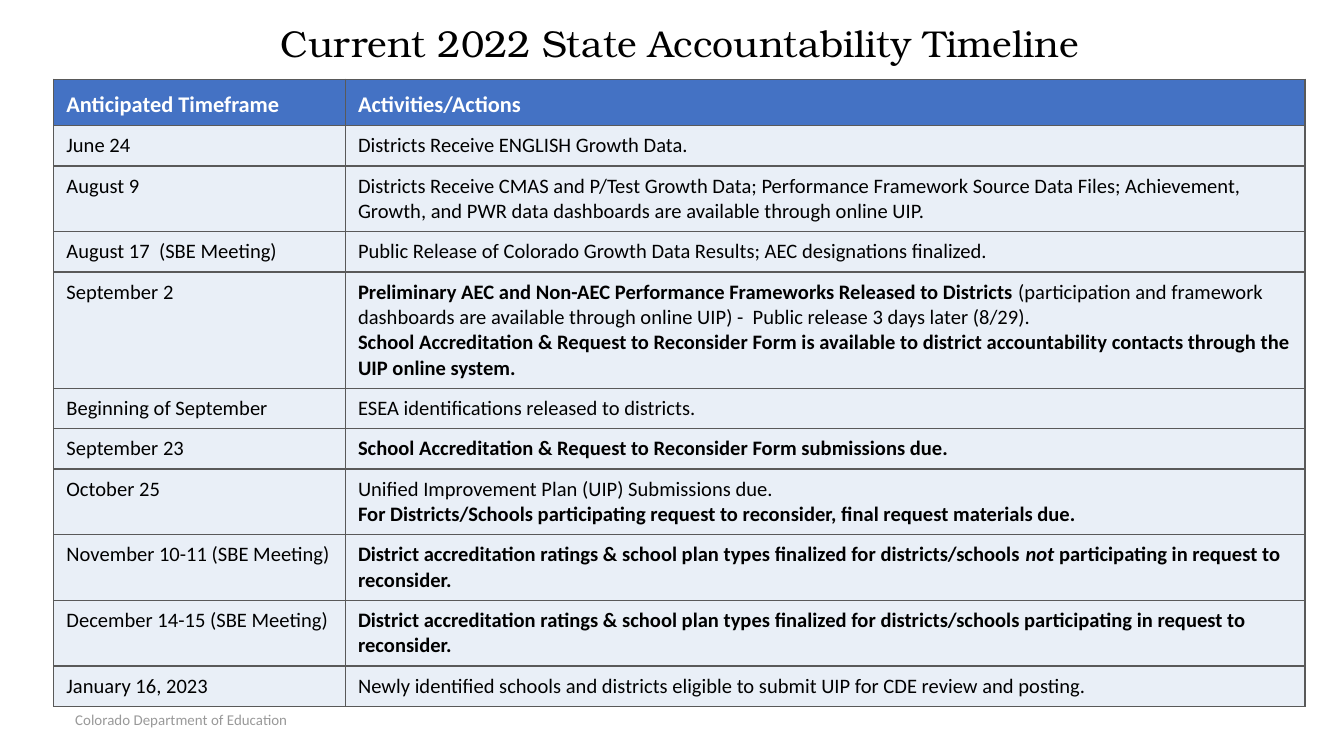
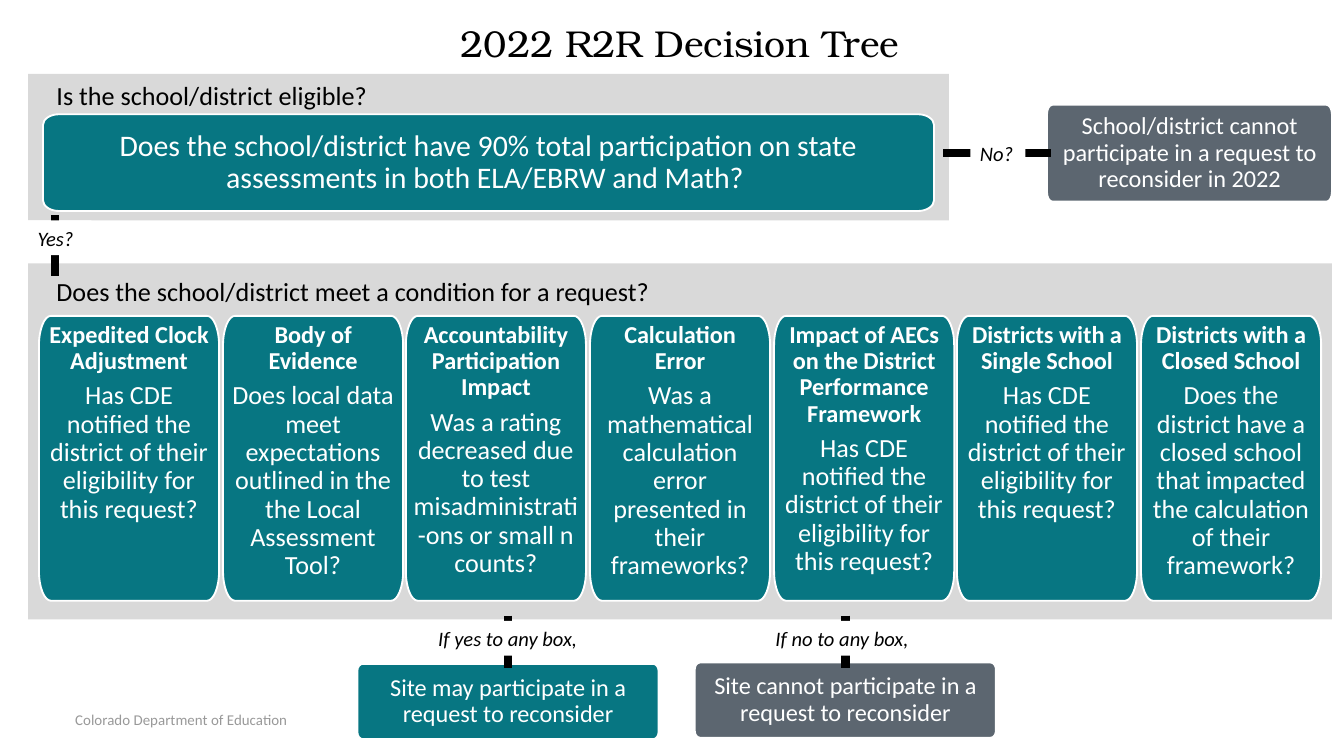
"""Builds two slides: the 2022 accountability timeline and the R2R decision tree."""
from lxml.etree import SubElement
from pptx import Presentation
from pptx.dml.color import RGBColor
from pptx.enum.shapes import MSO_CONNECTOR, MSO_SHAPE
from pptx.enum.text import MSO_ANCHOR as ANCHOR, MSO_AUTO_SIZE, PP_ALIGN as ALIGN
from pptx.oxml.ns import qn
from pptx.util import Emu, Pt

EMU_PER_PX = 9144
SLIDE_WIDTH = 1000
BODY_FONT, TITLE_FONT = "Calibri", "TeX Gyre Bonum"

BLACK = RGBColor(0x00, 0x00, 0x00)
WHITE = RGBColor(0xFF, 0xFF, 0xFF)
FOOTER_GRAY = RGBColor(0x99, 0x99, 0x99)
PANEL_GRAY = RGBColor(0xD9, 0xD9, 0xD9)
HEADER_BLUE = RGBColor(0x44, 0x72, 0xC4)
ROW_BLUE = RGBColor(0xE9, 0xEF, 0xF7)
BORDER_GRAY = RGBColor(0x59, 0x59, 0x59)
TEAL = RGBColor(0x07, 0x76, 0x82)
SLATE = RGBColor(0x5C, 0x66, 0x70)

FOOTER = "Colorado Department of Education"
TIMELINE_TITLE = "Current 2022 State Accountability Timeline"
TREE_TITLE = "2022 R2R Decision Tree"

TIMELINE_HEADER = ("Anticipated Timeframe", "Activities/Actions")
TIMELINE = [
    ("June 24", ["Districts Receive ENGLISH Growth Data."]),
    ("August 9", [
        "Districts Receive CMAS and P/Test Growth Data; Performance Framework Source Data Files; "
        "Achievement, Growth, and PWR data dashboards are available through online UIP."]),
    ("August 17  (SBE Meeting)", [
        "Public Release of Colorado Growth Data Results; AEC designations finalized."]),
    ("September 2", [
        [("Preliminary AEC and Non-AEC Performance Frameworks Released to Districts ", "b"),
         ("(participation and framework dashboards are available through online UIP) -  "
          "Public release 3 days later (8/29).", "")],
        [("School Accreditation & Request to Reconsider Form is available to district "
          "accountability contacts through the UIP online system.", "b")]]),
    ("Beginning of September", ["ESEA identifications released to districts."]),
    ("September 23", [
        [("School Accreditation & Request to Reconsider Form submissions due.", "b")]]),
    ("October 25", [
        "Unified Improvement Plan (UIP) Submissions due.",
        [("For Districts/Schools participating request to reconsider, "
          "final request materials due.", "b")]]),
    ("November 10-11 (SBE Meeting)", [
        [("District accreditation ratings & school plan types finalized for districts/schools ", "b"),
         ("not ", "bi"),
         ("participating in request to reconsider.", "b")]]),
    ("December 14-15 (SBE Meeting)", [
        [("District accreditation ratings & school plan types finalized for districts/schools "
          "participating in request to reconsider.", "b")]]),
    ("January 16, 2023", [
        "Newly identified schools and districts eligible to submit UIP for CDE review and posting."]),
]
TIMELINE_BOX = (40, 59, 931, 464)
COLUMN_WIDTHS = (217, 714)
ROW_HEIGHTS = (21, 21, 27, 21, 27, 21, 21, 39, 16, 17, 16)

PANELS = [(21, 55, 685, 109), (21, 196, 970, 265)]
PANEL_QUESTIONS = [
    ("Is the school/district eligible?", (35, 55, 659, 31)),
    ("Does the school/district meet a condition for a request?", (35, 201, 613, 31)),
]
NOTIFIED = "Has CDE notified the district of their eligibility for this request?"
CONDITIONS = [
    (["Expedited Clock Adjustment"], NOTIFIED),
    (["Body of Evidence"],
     "Does local data meet expectations outlined in the the Local Assessment Tool?"),
    (["Accountability Participation Impact"],
     "Was a rating decreased due to test misadministrati-ons or small n counts?"),
    (["Calculation", "Error"],
     "Was a mathematical calculation error presented in their frameworks?"),
    (["Impact of AECs on the District Performance Framework"], NOTIFIED),
    (["Districts with a Single School"], NOTIFIED),
    (["Districts with a Closed School"],
     "Does the district have a closed school that impacted the calculation of their framework?"),
]
FIRST_CONDITION, LAST_CONDITION = 29, 849
CONDITION_TOP, CONDITION_WIDTH, CONDITION_HEIGHT = 235, 134, 212

DECISIONS = [
    ("Does the school/district have 90% total participation on state assessments "
     "in both ELA/EBRW and Math? ", (32, 85, 663, 72), (12, 8), TEAL, 16),
    ("School/district cannot participate in a request to reconsider in 2022",
     (779, 78, 212, 72), (4, 7), SLATE, 13),
    ("Site may participate in a request to reconsider", (266, 494, 224, 56), (4, 5), TEAL, 13),
    ("Site cannot participate in a request to reconsider", (517, 493, 224, 56), (4, 5), SLATE, 13),
]
BRANCHES = [
    ("No?", (702, 114, 782, 114), (722, 101, 41, 26)),
    ("Yes?", (41, 160, 41, 205), (21, 164, 47, 26)),
    ("If yes to any box,", (378, 458, 378, 497), (319, 462, 119, 26)),
    ("If no to any box,", (629, 458, 629, 497), (570, 462, 119, 26)),
]


def px(*lengths):
    return [Emu(round(length * EMU_PER_PX)) for length in lengths]


def set_style(font, style):
    font.bold = "b" in style
    font.italic = "i" in style


def write(frame, paragraphs, size, color, insets=(7, 4), align=ALIGN.LEFT,
          anchor=ANCHOR.TOP, spacing=None, font=BODY_FONT):
    frame.word_wrap = True
    frame.auto_size = MSO_AUTO_SIZE.NONE
    frame.vertical_anchor = anchor
    across, down = px(*insets)
    frame.margin_left = frame.margin_right = across
    frame.margin_top = frame.margin_bottom = down
    write_paragraphs(frame, paragraphs, size, color, align, spacing, font)


def write_paragraphs(frame, paragraphs, size, color, align=ALIGN.LEFT, spacing=None, font=BODY_FONT):
    for index, content in enumerate(paragraphs):
        paragraph = frame.add_paragraph() if index else frame.paragraphs[0]
        paragraph.alignment = align
        if spacing:
            paragraph.line_spacing = spacing
        paragraph.font.name = font
        paragraph.font.size = Pt(size)
        paragraph.font.color.rgb = color
        runs = [(content, "")] if isinstance(content, str) else content
        same_style = len({style for _, style in runs}) == 1
        if same_style:
            set_style(paragraph.font, runs[0][1])
        for text, style in runs:
            run = paragraph.add_run()
            run.text = text
            if not same_style:
                set_style(run.font, style)


def add_footer(layout, slide):
    for placeholder in list(layout.placeholders):
        if placeholder.placeholder_format.idx:
            placeholder.element.getparent().remove(placeholder.element)
    footer = slide.shapes.add_textbox(*px(56, 529, 323, 13))
    write(footer.text_frame, [FOOTER], 8, FOOTER_GRAY, (0, 0))
    layout.shapes.element.append(footer.element)


def add_titled_slide(prs, title):
    slide = prs.slides.add_slide(prs.slide_layouts[5])
    heading = slide.shapes.title
    heading.left, heading.top, heading.width, heading.height = px(21, 5, 970, 54)
    write(heading.text_frame, [title], 20, BLACK, (10, 10), ALIGN.CENTER, font=TITLE_FONT)
    return slide


def format_cell(cell, paragraphs, fill, size, color, spacing=None):
    cell.margin_left = cell.margin_right = Pt(6.8)
    cell.margin_top = cell.margin_bottom = Pt(4)
    cell.vertical_anchor = ANCHOR.TOP
    properties = cell._tc.get_or_add_tcPr()
    for side in ("a:lnL", "a:lnR", "a:lnT", "a:lnB"):
        border = SubElement(properties, qn(side), w=str(Pt(0.75)))
        SubElement(SubElement(border, qn("a:solidFill")), qn("a:srgbClr"), val=str(BORDER_GRAY))
    cell.fill.solid()
    cell.fill.fore_color.rgb = fill
    write_paragraphs(cell.text_frame, paragraphs, size, color, spacing=spacing)


def add_timeline(slide):
    frame = slide.shapes.add_table(len(TIMELINE) + 1, 2, *px(*TIMELINE_BOX))
    table = frame.table
    for column, width in zip(table.columns, px(*COLUMN_WIDTHS)):
        column.width = width
    for row, height in zip(table.rows, px(*ROW_HEIGHTS)):
        row.height = height
    frame.height = px(TIMELINE_BOX[3])[0]
    for column, label in enumerate(TIMELINE_HEADER):
        format_cell(table.cell(0, column), [[(label, "b")]], HEADER_BLUE, 12, WHITE, 1.15)
    for row, (timeframe, actions) in enumerate(TIMELINE, 1):
        format_cell(table.cell(row, 0), [timeframe], ROW_BLUE, 11, BLACK)
        format_cell(table.cell(row, 1), actions, ROW_BLUE, 11, BLACK)


def paint(shape, fill):
    shape.shadow.inherit = False
    shape.fill.solid()
    shape.fill.fore_color.rgb = fill
    shape.line.fill.background()


def add_rectangle(slide, box, fill):
    rectangle = slide.shapes.add_shape(MSO_SHAPE.RECTANGLE, *px(*box))
    paint(rectangle, fill)
    return rectangle


def add_rounded(slide, box, radii, fill):
    left, top, width, height = box
    rx, ry = radii
    right, bottom = left + width, top + height
    corners = [((left, top + ry), (left, top), (left + rx, top)),
               ((right - rx, top), (right, top), (right, top + ry)),
               ((right, bottom - ry), (right, bottom), (right - rx, bottom)),
               ((left + rx, bottom), (left, bottom), (left, bottom - ry))]
    points = []
    for start, (tip_x, tip_y), end in corners:
        pulls = [(x + 0.55 * (tip_x - x), y + 0.55 * (tip_y - y)) for x, y in (start, end)]
        points += [px(*point) for point in (start, *pulls, end)]
    builder = slide.shapes.build_freeform(*points[0])
    builder.add_line_segments(points[1:], close=True)
    rounded = builder.convert_to_shape()
    round_corners(rounded)
    paint(rounded, fill)
    rounded.line.color.rgb = WHITE
    rounded.line.width = Pt(1)
    return rounded


def round_corners(shape):
    segments = list(shape.element.iter(qn("a:lnTo")))
    for first in range(0, len(segments) - 2, 4):
        curve = SubElement(segments[first].getparent(), qn("a:cubicBezTo"))
        segments[first].addprevious(curve)
        for segment in segments[first:first + 3]:
            curve.append(segment[0])
            segment.getparent().remove(segment)


def add_condition(slide, index, names, question):
    pitch = (LAST_CONDITION - FIRST_CONDITION) / (len(CONDITIONS) - 1)
    box = (round(FIRST_CONDITION + index * pitch), CONDITION_TOP, CONDITION_WIDTH, CONDITION_HEIGHT)
    card = add_rounded(slide, box, (9, 22), TEAL)
    lines = [[(name, "b")] for name in names] + [question]
    write(card.text_frame, lines, 13, WHITE, (5, 5), ALIGN.CENTER, spacing=0.9)
    closing = card.text_frame.paragraphs[-1]
    closing.font.size = Pt(14)
    closing.space_before = Pt(4)


def add_branch(slide, label, ends, box):
    line = slide.shapes.add_connector(MSO_CONNECTOR.STRAIGHT, *px(*ends))
    line.line.color.rgb = BLACK
    line.line.width = Pt(4.5)
    SubElement(line.element.spPr, qn("a:effectLst"))
    answer = add_rectangle(slide, box, WHITE)
    write(answer.text_frame, [[(label, "i")]], 11, BLACK)


def add_decision_tree(slide):
    for panel in PANELS:
        add_rectangle(slide, panel, PANEL_GRAY)
    for question, box in PANEL_QUESTIONS:
        write(slide.shapes.add_textbox(*px(*box)).text_frame, [question], 14, BLACK)
    for index, (names, question) in enumerate(CONDITIONS):
        add_condition(slide, index, names, question)
    for text, box, radii, fill, size in DECISIONS:
        decision = add_rounded(slide, box, radii, fill)
        write(decision.text_frame, [text], size, WHITE, (7, 7), ALIGN.CENTER, ANCHOR.MIDDLE, 0.9)
    for branch in BRANCHES:
        add_branch(slide, *branch)


def main():
    prs = Presentation()
    prs.slide_width = px(SLIDE_WIDTH)[0]
    prs.slide_height = Emu(prs.slide_width * 9 // 16)
    timeline = add_titled_slide(prs, TIMELINE_TITLE)
    add_footer(timeline.slide_layout, timeline)
    add_timeline(timeline)
    add_decision_tree(add_titled_slide(prs, TREE_TITLE))
    prs.save("out.pptx")


if __name__ == "__main__":
    main()
